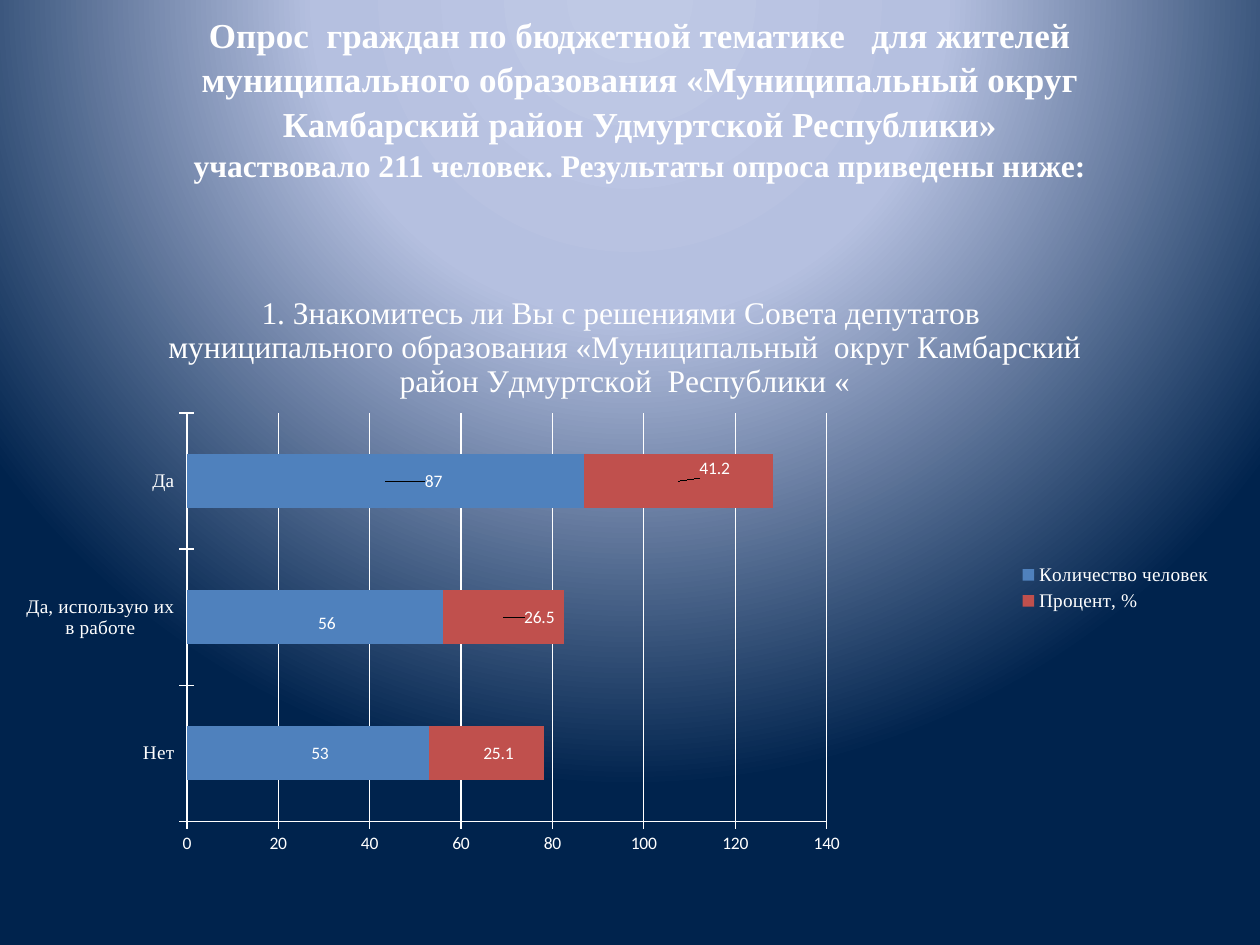
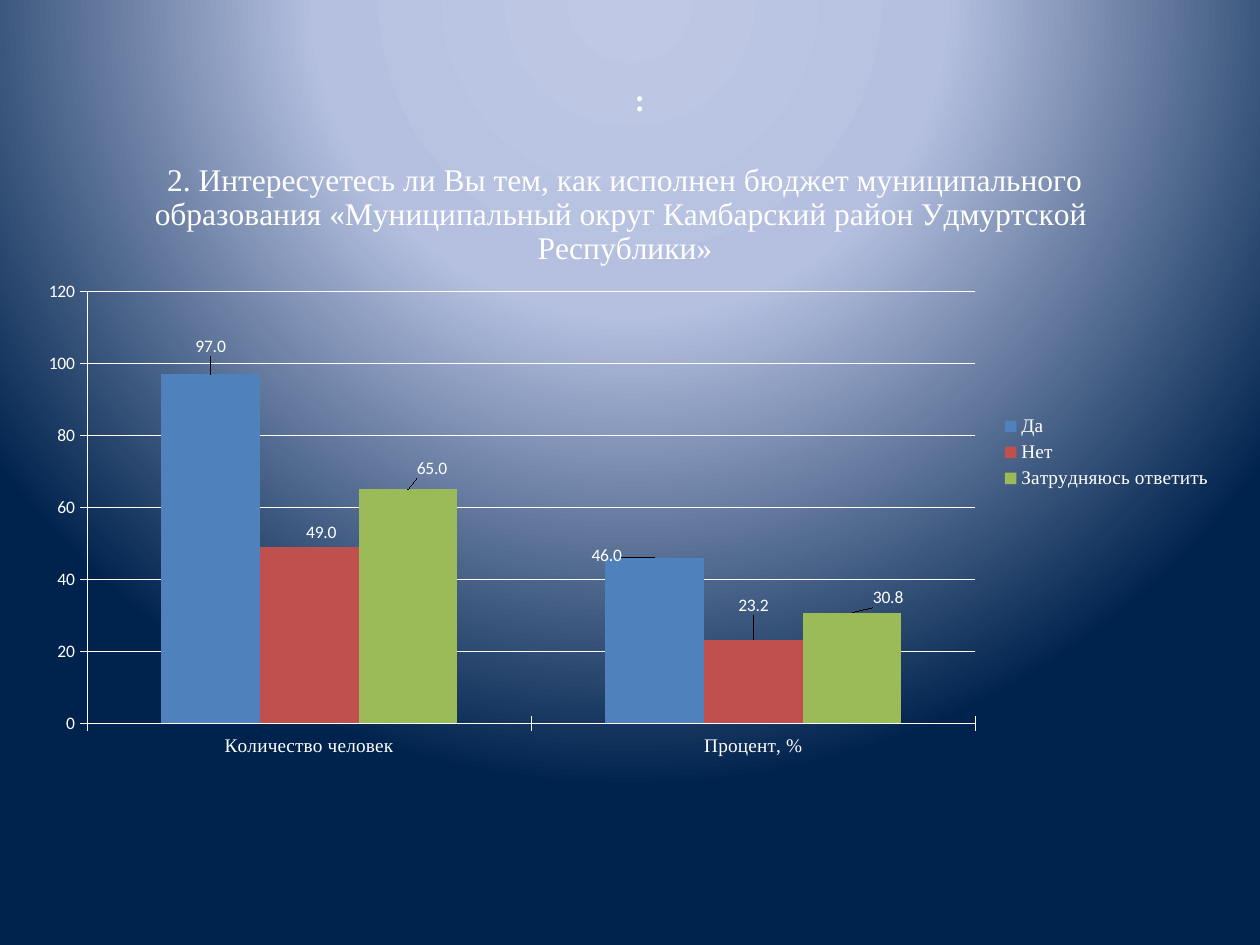
from dataclasses import dataclass

from pptx import Presentation
from pptx.chart.data import CategoryChartData
from pptx.dml.color import RGBColor
from pptx.enum.chart import (XL_CHART_TYPE, XL_LABEL_POSITION,
                             XL_LEGEND_POSITION, XL_TICK_MARK)
from pptx.enum.text import MSO_ANCHOR, PP_ALIGN
from pptx.oxml import parse_xml
from pptx.oxml.ns import nsdecls
from pptx.util import Cm, Pt

STACKED_BAR = XL_CHART_TYPE.BAR_STACKED
COLUMNS = XL_CHART_TYPE.COLUMN_CLUSTERED
CENTER = XL_LABEL_POSITION.CENTER
OUTSIDE = XL_LABEL_POSITION.OUTSIDE_END
LEGEND_RIGHT = XL_LEGEND_POSITION.RIGHT
CROSS = XL_TICK_MARK.CROSS
MIDDLE = MSO_ANCHOR.MIDDLE
ALIGN_CENTER = PP_ALIGN.CENTER


@dataclass(frozen=True)
class Theme:
    text: str = "FFFFFF"
    series: tuple = ("4F81BD", "C0504D", "9BBB59")
    glow: tuple = ((0, "BFC9E5"), (40, "B5C0E0"), (100, "00234D"))
    serif: str = "Times New Roman"
    sans: str = "Calibri"
    heading: int = 20
    subheading: int = 18
    caption: int = 11
    value: int = 10
    line: float = 0.75


class Deck:
    """Holds the presentation, its theme and the current slide."""

    def __init__(self, theme):
        self.theme = theme
        self.prs = Presentation()
        self.prs.slide_width, self.prs.slide_height = Cm(25.4), Cm(19.05)
        self.s = None
        self.set_background()

    def set_background(self):
        """Give the master a circular glow centred above the slide."""
        stops = "".join(
            f'<a:gs pos="{pos * 1000}"><a:srgbClr val="{color}"/></a:gs>'
            for pos, color in self.theme.glow)
        c_sld = self.prs.slide_master.element.cSld
        for old in c_sld.xpath("./p:bg"):
            c_sld.remove(old)
        c_sld.insert(0, parse_xml(
            f'<p:bg {nsdecls("p", "a")}><p:bgPr><a:gradFill rotWithShape="1">'
            f'<a:gsLst>{stops}</a:gsLst><a:path path="circle">'
            '<a:fillToRect l="50000" t="-80000" r="50000" b="180000"/></a:path>'
            '</a:gradFill><a:effectLst/></p:bgPr></p:bg>'))

    def add_slide(self):
        self.s = self.prs.slides.add_slide(self.prs.slide_layouts[6])

    def style(self, font, size, name, bold=False):
        font.size, font.name, font.bold = Pt(size), name, bold
        font.color.rgb = RGBColor.from_string(self.theme.text)

    def add_heading(self, *lines):
        """Add the centred heading; each line is (text, size)."""
        sp = self.s.shapes.add_textbox(Cm(2.1), Cm(0.33), Cm(21.6), Cm(3.28))
        tf = sp.text_frame
        tf.word_wrap, tf.vertical_anchor = True, MIDDLE
        for i, (text, size) in enumerate(lines):
            p = tf.add_paragraph() if i else tf.paragraphs[0]
            p.alignment, p.line_spacing = ALIGN_CENTER, 1.05
            r = p.add_run()
            r.text = text
            self.style(r.font, size, self.theme.serif, bold=True)

    def add_chart(self, kind, top, height, title, cats, series, plot_box,
                  axis_max, label_pos):
        """Add a chart; each series is (name, values, format, label shifts)."""
        t = self.theme
        data = CategoryChartData()
        data.categories = cats
        for name, values, fmt, _ in series:
            data.add_series(name, values, fmt)
        chart = self.s.shapes.add_chart(
            kind, Cm(0.5), Cm(top), Cm(24.2), Cm(height), data).chart
        self.style(chart.font, t.value, t.sans)

        # Title and legend
        chart.has_title = True
        r = chart.chart_title.text_frame.paragraphs[0].add_run()
        r.text = title
        self.style(r.font, t.subheading, t.serif)
        chart.chart_title.include_in_layout = False
        chart.has_legend = True
        chart.legend.position = LEGEND_RIGHT
        chart.legend.include_in_layout = False
        self.style(chart.legend.font, t.caption, t.serif)

        # Axes
        cat_axis, val_axis = chart.category_axis, chart.value_axis
        val_axis.has_major_gridlines = True
        val_axis.minimum_scale, val_axis.maximum_scale = 0, axis_max
        val_axis.major_unit = 20
        val_axis.tick_labels.number_format = "General"
        val_axis.tick_labels.number_format_is_linked = False
        self.style(cat_axis.tick_labels.font, t.caption, t.serif)
        self.style(val_axis.tick_labels.font, t.value, t.sans)
        for axis in (cat_axis, val_axis):
            axis.major_tick_mark = CROSS
        for part in (cat_axis, val_axis, val_axis.major_gridlines):
            part.format.line.width = Pt(t.line)
            part.format.line.color.rgb = RGBColor.from_string(t.text)

        # Series and their value labels
        plot = chart.plots[0]
        plot.gap_width = 150
        plot.overlap = 100 if kind == STACKED_BAR else 0
        plot.vary_by_categories = False
        for ser, color, (_, _, fmt, shifts) in zip(plot.series, t.series, series):
            ser.format.fill.solid()
            ser.format.fill.fore_color.rgb = RGBColor.from_string(color)
            labels = ser.data_labels
            labels.show_value, labels.position = True, label_pos
            labels.number_format, labels.number_format_is_linked = fmt, False
            self.style(labels.font, t.value, t.sans)
            for i, shift in enumerate(shifts):
                label = ser.points[i].data_label
                label.position = label_pos
                self.style(label.font, t.value, t.sans)
            for idx, shift in zip(ser._element.xpath(".//c:dLbl/c:idx"), shifts):
                idx.addnext(self.layout(x=shift[0], y=shift[1]))

        # Inner plot area
        area = chart._chartSpace.chart.plotArea
        for old in area.xpath("./c:layout"):
            area.remove(old)
        x, y, w, h = plot_box
        area.insert(0, self.layout(layoutTarget="inner", xMode="edge",
                                   yMode="edge", x=x, y=y, w=w, h=h))

    @staticmethod
    def layout(**values):
        parts = "".join(f'<c:{tag} val="{v}"/>' for tag, v in values.items())
        return parse_xml(f'<c:layout {nsdecls("c")}><c:manualLayout>{parts}'
                         '</c:manualLayout></c:layout>')


def main():
    theme = Theme()
    deck = Deck(theme)
    people, percent = "Количество человек", "Процент, %"

    # Question 1: council decisions
    deck.add_slide()
    deck.add_heading(
        ("Опрос  граждан по бюджетной тематике   для жителей муниципального "
         "образования «Муниципальный округ Камбарский район Удмуртской "
         "Республики»", theme.heading),
        ("участвовало 211 человек. Результаты опроса приведены ниже:",
         theme.subheading))
    deck.add_chart(
        STACKED_BAR, 5.4, 12.9,
        "1. Знакомитесь ли Вы с решениями Совета депутатов  муниципального "
        "образования «Муниципальный  округ Камбарский район Удмуртской  "
        "Республики «",
        ["Нет", "Да, использую их в работе", "Да"],
        [(people, (53, 56, 87), "General",
          ((0.01, 0), (0.01, 0.01), (0.04, 0))),
         (percent, (25.1, 26.5, 41.2), "0.0",
          ((0.01, 0), (0.03, 0), (0.03, -0.02)))],
        plot_box=(0.135, 0.227, 0.533, 0.638), axis_max=140, label_pos=CENTER)

    # Question 2: budget execution
    deck.add_slide()
    deck.add_heading((":", theme.subheading))
    deck.add_chart(
        COLUMNS, 2.72, 12.8,
        "2. Интересуетесь ли Вы тем, как исполнен бюджет муниципального "
        "образования «Муниципальный округ Камбарский район Удмуртской  "
        "Республики»",
        [people, percent],
        [("Да", (97, 46), "0.0", ((0, -0.02), (-0.04, 0.02))),
         ("Нет", (49, 23.2), "0.0", ((0.01, 0), (0, -0.03))),
         ("Затрудняюсь ответить", (65, 30.8), "0.0",
          ((0.02, -0.01), (0.03, 0)))],
        plot_box=(0.052, 0.247, 0.74, 0.68), axis_max=120, label_pos=OUTSIDE)

    deck.prs.save("out.pptx")


if __name__ == "__main__":
    main()
